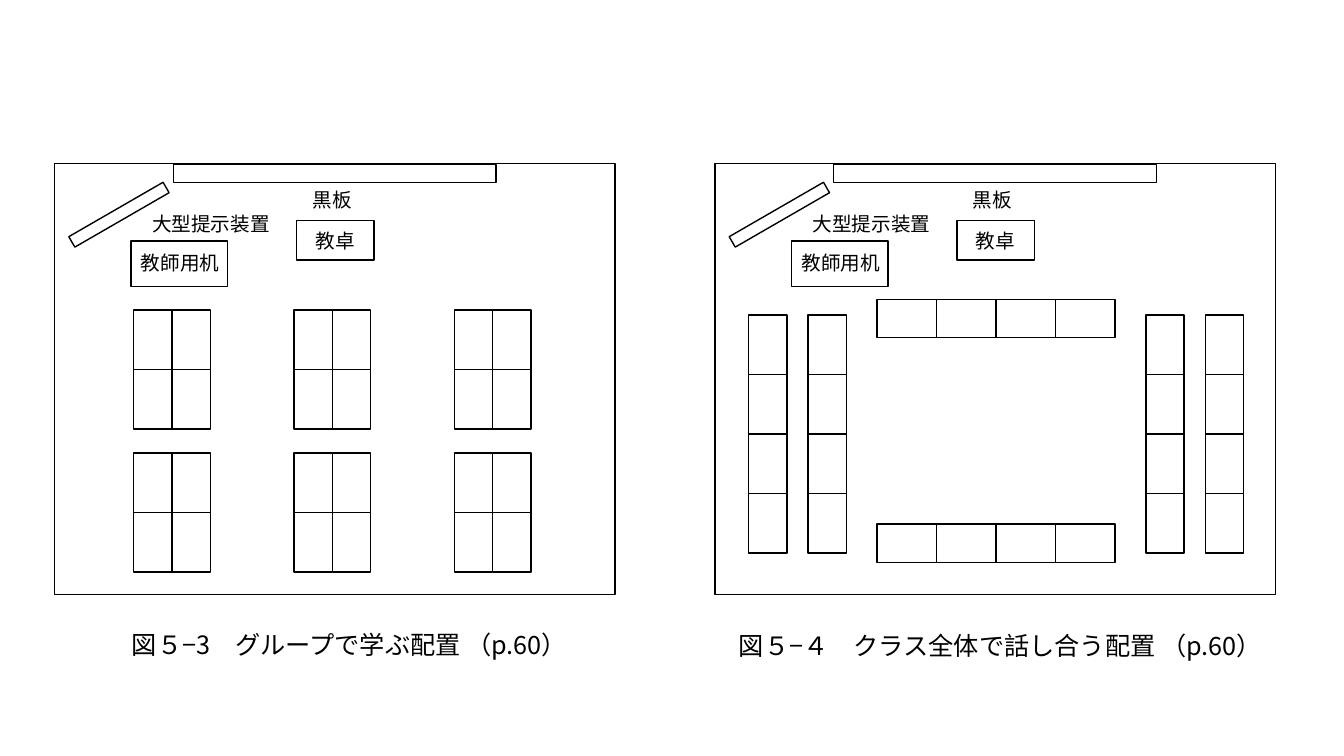
"""Build a slide with two classroom seating plans and their captions."""
from pptx import Presentation
from pptx.dml.color import RGBColor
from pptx.enum.shapes import MSO_SHAPE
from pptx.util import Inches, Pt

COLORS = {"ink": "000000", "desk": "FFFFFF"}
FONT = "Noto Sans CJK JP"
DESK_WIDTH, DESK_HEIGHT = 0.59, 0.38

ROOM_LEFTS = [0.54, 7.09]
ROOM_TOP = 1.62
FIXTURES = [
    (0, 0, 5.56, 4.28, 0),
    (2.4, 0.57, 0.77, 0.39, 0),
    (1.18, 0.01, 3.2, 0.18, 0),
    (0.76, 0.77, 0.96, 0.45, 0),
    (0.1, 0.45, 1.08, 0.12, 330),
]
LABELS = [
    ("黒板", 2.46, 0.2, 0.59),
    ("教卓", 2.49, 0.6, 0.59),
    ("教師用机", 0.76, 0.82, 0.99),
    ("大型提示装置", 0.87, 0.43, 1.38),
]
CAPTIONS = [
    ("図５−3　グループで学ぶ配置 （p.60）", 1.21, 6.19, 4.6),
    ("図５−４　クラス全体で話し合う配置 （p.60）", 7.23, 6.2, 5.56),
]
GROUP_LEFTS, GROUP_TOPS = [1.22, 2.81, 4.4], [3.18, 4.6]
SIDE_LEFTS, SIDE_TOP = [7.32, 7.91, 11.26, 11.85], 3.23
FACING_LEFT, FACING_TOPS = 8.7, [2.97, 5.2]


def add_box(shapes, left, top, width, height, rotation=0, fill=None):
    box = shapes.add_shape(MSO_SHAPE.RECTANGLE, Inches(left), Inches(top),
                           Inches(width), Inches(height))
    box.rotation = rotation
    box.shadow.inherit = False
    box.line.color.rgb = RGBColor.from_string(COLORS["ink"])
    box.line.width = Pt(1)
    if fill:
        box.fill.solid()
        box.fill.fore_color.rgb = RGBColor.from_string(fill)
    else:
        box.fill.background()


def add_text(slide, text, left, top, width, size, wrap=False):
    height = 0.4 if wrap else 0.34
    box = slide.shapes.add_textbox(Inches(left), Inches(top), Inches(width), Inches(height))
    box.text_frame.word_wrap = wrap
    para = box.text_frame.paragraphs[0]
    para.text = text
    para.font.size = Pt(size)
    para.font.name = FONT
    para.font.color.rgb = RGBColor.from_string(COLORS["ink"])
    for span in para.runs:
        span.font.language_id = None
        properties = span._r.get_or_add_rPr()
        east_asian = properties.makeelement(
            "{http://schemas.openxmlformats.org/drawingml/2006/main}ea", {"typeface": FONT})
        properties.append(east_asian)


def add_desks(slide, left, top, columns, rows, rotation=0):
    step_x, step_y = (DESK_HEIGHT, DESK_WIDTH) if rotation else (DESK_WIDTH, DESK_HEIGHT)
    group = slide.shapes.add_group_shape()
    for column in range(columns):
        for row in range(rows):
            add_box(group.shapes, left + column * step_x, top + row * step_y,
                    DESK_WIDTH, DESK_HEIGHT, rotation, COLORS["desk"])


def add_room(slide, room_left):
    for left, top, width, height, rotation in FIXTURES:
        add_box(slide.shapes, room_left + left, ROOM_TOP + top, width, height, rotation)
    for text, left, top, width in LABELS:
        add_text(slide, text, room_left + left, ROOM_TOP + top, width, 14)


def main():
    deck = Presentation()
    deck.slide_width, deck.slide_height = Inches(13.33), Inches(7.5)
    slide = deck.slides.add_slide(deck.slide_layouts[6])

    for room_left in ROOM_LEFTS:
        add_room(slide, room_left)
    for top in GROUP_TOPS:
        for left in GROUP_LEFTS:
            add_desks(slide, left, top, 2, 2, 90)
    for top in FACING_TOPS:
        add_desks(slide, FACING_LEFT, top, 4, 1)
    for left in SIDE_LEFTS:
        add_desks(slide, left, SIDE_TOP, 1, 4, 270)
    for text, left, top, width in CAPTIONS:
        add_text(slide, text, left, top, width, 18, wrap=True)

    deck.save("out.pptx")


if __name__ == "__main__":
    main()
